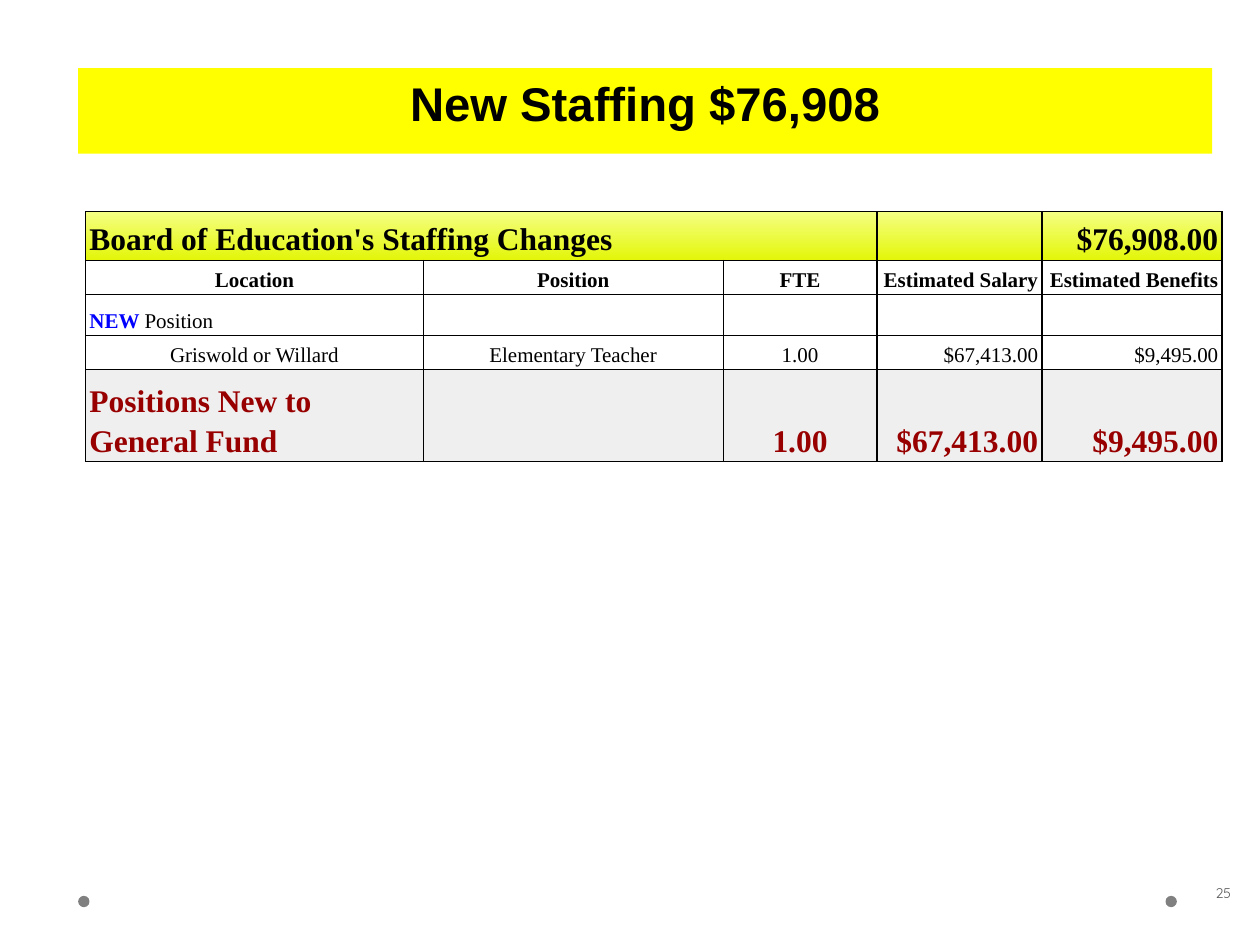
from dataclasses import dataclass
from typing import Optional

from lxml.etree import SubElement
from pptx import Presentation
from pptx.dml.color import RGBColor as RGB
from pptx.enum.shapes import MSO_SHAPE as Shape
from pptx.enum.text import MSO_ANCHOR as Anchor, PP_ALIGN as Align
from pptx.oxml.ns import qn
from pptx.util import Inches, Pt


@dataclass(frozen=True)
class Theme:
    black: str = "000000"
    white: str = "FFFFFF"
    yellow: str = "FFFF00"
    blue: str = "0000FF"
    red: str = "980000"
    dot: str = "808080"
    number: str = "595959"
    total_fill: str = "EFEFEF"
    band: tuple[str, str] = ("F5FF83", "E3F609")
    title_font: str = "Arial"
    table_font: str = "Times New Roman"
    number_font: str = "Quicksand"
    title_size: float = 27
    large: float = 18
    body: float = 12
    small: float = 8
    border: float = 0.83


T = Theme()


@dataclass(frozen=True)
class Row:
    height: float
    texts: tuple[str, ...]
    aligns: str
    size: float = T.body
    bold: bool = False
    color: str = T.black
    fill: Optional[str] = T.white  # None means the gradient band
    lead: str = ""  # highlighted words that open the first cell


ALIGNS = {"l": Align.LEFT, "c": Align.CENTER, "r": Align.RIGHT}
COLUMNS = (2.68, 2.38, 1.22, 1.31, 1.43)
ROWS = (
    Row(0.37, ("Board of Education's Staffing Changes", "", "", "", "$76,908.00"),
        "lcccr", T.large, True, fill=None),
    Row(0.25, ("Location", "Position", "FTE", "Estimated Salary",
               "Estimated Benefits"), "cccrr", bold=True),
    Row(0.33, ("Position", "", "", "", ""), "lccrr", lead="NEW "),
    Row(0.25, ("Griswold or Willard", "Elementary Teacher", "1.00",
               "$67,413.00", "$9,495.00"), "cccrr"),
    Row(0.68, ("Positions New to General Fund", "", "1.00", "$67,413.00",
               "$9,495.00"), "lccrr", T.large, True, T.red, T.total_fill),
)


def style_font(font, name: str, size: float, color: str, bold: bool = False) -> None:
    font.name, font.size, font.bold = name, Pt(size), bold
    font.color.rgb = RGB.from_string(color)


def add_filled(slide, kind, box: tuple[float, ...], color: str):
    s = slide.shapes.add_shape(kind, *map(Inches, box))
    s.shadow.inherit = False
    s.fill.solid()
    s.fill.fore_color.rgb = RGB.from_string(color)
    s.line.fill.background()
    return s


def add_run(p, text: str, color: str, bold: bool) -> None:
    r = p.add_run()
    r.text = text
    r.font.bold = bold
    r.font.color.rgb = RGB.from_string(color)


def fill_cell(cell, color: Optional[str]) -> None:
    if color:
        cell.fill.solid()
        cell.fill.fore_color.rgb = RGB.from_string(color)
        return
    cell.fill.gradient()
    cell.fill.gradient_angle = 270
    for stop, stop_color, pos in zip(cell.fill.gradient_stops, T.band, (0, 1)):
        stop.color.rgb = RGB.from_string(stop_color)
        stop.position = pos


def set_borders(cell, hidden: str) -> None:
    """Draw every cell edge except the sides named in hidden."""
    tc_pr = cell._tc.get_or_add_tcPr()
    for i, side in enumerate("LRTB"):
        ln = SubElement(tc_pr, qn(f"a:ln{side}"), w=str(Pt(T.border)))
        tc_pr.insert(i, ln)
        if side in hidden:
            SubElement(ln, qn("a:noFill"))
        else:
            fill = SubElement(ln, qn("a:solidFill"))
            SubElement(fill, qn("a:srgbClr"), val=T.black)


def fill_table(table) -> None:
    table.first_row = table.horz_banding = False
    for column, width in zip(table.columns, COLUMNS):
        column.width = Inches(width)
    for i, row in enumerate(ROWS):
        table.rows[i].height = Inches(row.height)
        for j, (text, align) in enumerate(zip(row.texts, row.aligns)):
            cell = table.cell(i, j)
            cell.vertical_anchor = Anchor.BOTTOM
            cell.margin_left = cell.margin_right = Inches(0.03)
            cell.margin_top = cell.margin_bottom = Inches(0.02)
            p = cell.text_frame.paragraphs[0]
            p.alignment, p.line_spacing = ALIGNS[align], 1.15
            p.font.name, p.font.size = T.table_font, Pt(row.size)
            if row.lead and j == 0:
                add_run(p, row.lead, T.blue, True)
            if text:
                add_run(p, text, row.color, row.bold)
            fill_cell(cell, row.fill)
            # The heading band runs unbroken over the first three columns
            set_borders(cell, {0: "R", 1: "LR", 2: "L"}.get(j, "") if i == 0 else "")
    table.cell(0, 0).merge(table.cell(0, 1))


def main() -> None:
    prs = Presentation()
    prs.slide_width, prs.slide_height = Inches(10), Inches(7.5)
    slide = prs.slides.add_slide(prs.slide_layouts[6])

    # Footer dots and slide number
    for left in (9.25, 0.62):
        add_filled(slide, Shape.OVAL, (left, 7.11, 0.09, 0.09), T.dot)
    tf = slide.shapes.add_textbox(*map(Inches, (9.27, 6.8, 0.6, 0.57))).text_frame
    tf.word_wrap, tf.vertical_anchor = True, Anchor.MIDDLE
    p = tf.paragraphs[0]
    p.text, p.alignment = "25", Align.RIGHT
    style_font(p.font, T.number_font, T.small, T.number)

    # Title banner
    tf = add_filled(slide, Shape.RECTANGLE, (0.62, 0.54, 9, 0.68), T.yellow).text_frame
    tf.vertical_anchor = Anchor.TOP
    p = tf.paragraphs[0]
    p.text, p.alignment = "New Staffing $76,908", Align.CENTER
    style_font(p.font, T.title_font, T.title_size, T.black, True)

    # Staffing table
    height = sum(row.height for row in ROWS)
    frame = slide.shapes.add_table(len(ROWS), len(COLUMNS), Inches(0.68), Inches(1.68),
                                   Inches(sum(COLUMNS)), Inches(height))
    fill_table(frame.table)

    prs.save("out.pptx")


if __name__ == "__main__":
    main()
